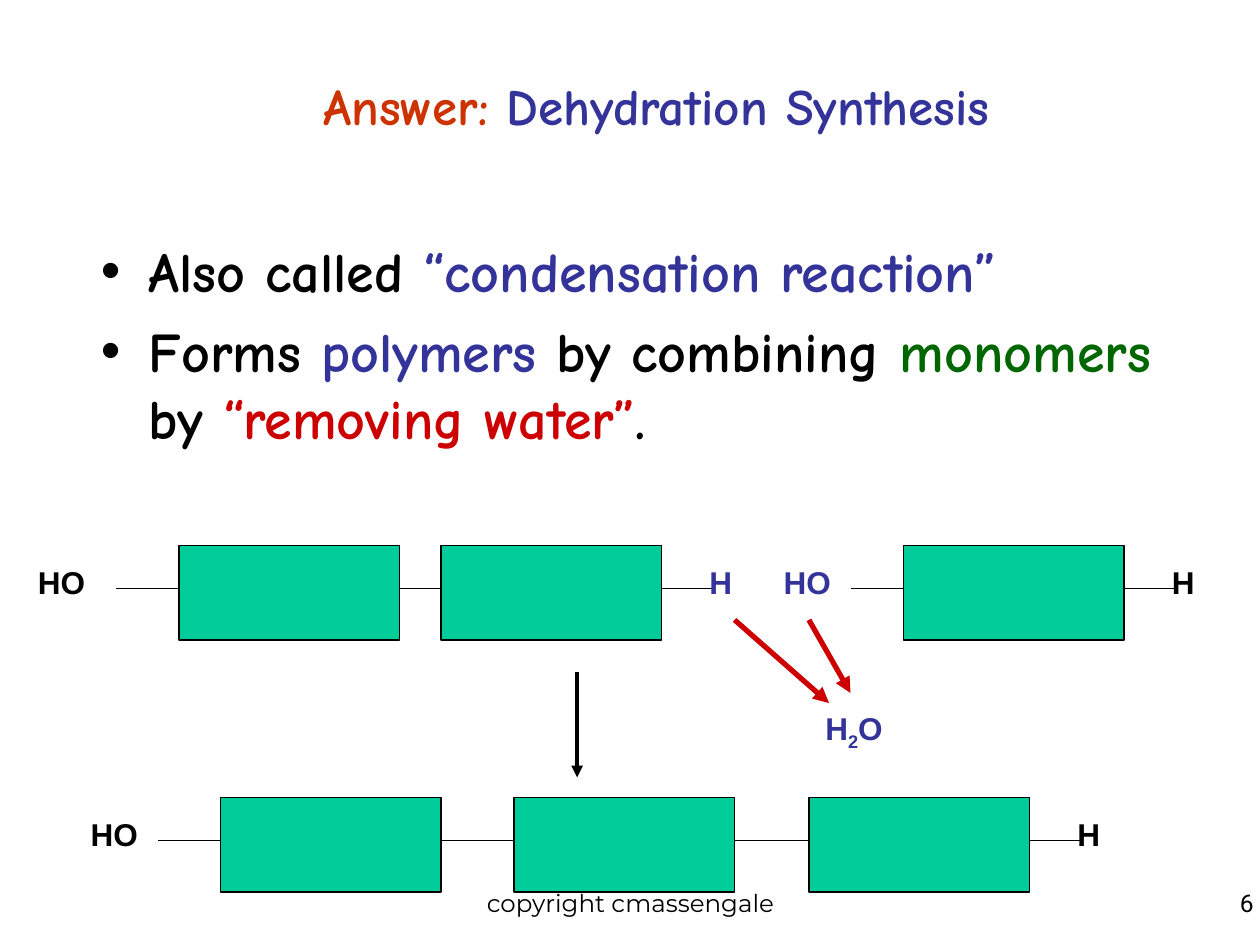
import pptx
import pptx.util
import pptx.dml.color
import pptx.enum.shapes
import pptx.enum.text
import pptx.oxml.ns
import lxml.etree
from dataclasses import dataclass

Inches = pptx.util.Inches
Pt = pptx.util.Pt
Align = pptx.enum.text.PP_ALIGN
Anchor = pptx.enum.text.MSO_ANCHOR
qn = pptx.oxml.ns.qn


@dataclass(frozen=True)
class Theme:
    black: str = "000000"
    blue: str = "333399"
    green: str = "006600"
    red: str = "CC0000"
    orange: str = "CC3300"
    monomer: str = "00CC99"
    hand: str = "Comic Neue"
    label: str = "Arial"
    footer: str = "Montserrat"
    number: str = "Roboto"
    title_size: float = 29.2
    body_size: float = 32
    label_size: float = 18
    small_size: float = 14
    thin: float = 1
    medium: float = 2.25
    thick: float = 3
    inset: float = 0.05


def rgb(value):
    return pptx.dml.color.RGBColor.from_string(value)


class SlideBuilder:
    def __init__(self, slide, theme):
        self.slide = slide
        self.theme = theme

    def text_box(self, left, top, width, height, wrap=True, anchor=Anchor.TOP):
        box = self.slide.shapes.add_textbox(
            Inches(left), Inches(top), Inches(width), Inches(height))
        frame = box.text_frame
        frame.word_wrap = wrap
        frame.vertical_anchor = anchor
        frame.margin_left = frame.margin_right = Inches(self.theme.inset)
        frame.margin_top = frame.margin_bottom = Inches(self.theme.inset)
        return frame

    def add_span(self, para, text, color, font, size, bold=False, baseline=None):
        span = para.add_run()
        span.text = text
        span.font.name = font
        span.font.size = Pt(size)
        span.font.bold = bold
        span.font.color.rgb = rgb(color)
        if baseline is not None:
            span._r.get_or_add_rPr().set("baseline", str(baseline))

    def title(self, spans):
        para = self.text_box(0.67, 0.5, 9.08, 0.67, anchor=Anchor.MIDDLE).paragraphs[0]
        para.alignment = Align.CENTER
        for text, color in spans:
            self.add_span(para, text, color, self.theme.hand, self.theme.title_size, True)

    def bullets(self, items):
        frame = self.text_box(0.75, 1.83, 8.5, 4.5)
        for index, spans in enumerate(items):
            para = frame.add_paragraph() if index else frame.paragraphs[0]
            properties = para._p.get_or_add_pPr()
            properties.set("marL", str(Inches(0.38)))
            properties.set("indent", str(-Inches(0.38)))
            lxml.etree.SubElement(properties, qn("a:buFont"), typeface=self.theme.label)
            lxml.etree.SubElement(properties, qn("a:buChar"), char="•")
            if index:
                para.space_before = Pt(7)
            for text, color in spans:
                self.add_span(para, text, color, self.theme.hand, self.theme.body_size, True)

    def label(self, left, top, width, spans, color, height=0.38):
        para = self.text_box(left, top, width, height, wrap=False).paragraphs[0]
        for text, baseline in spans:
            self.add_span(para, text, color, self.theme.label,
                          self.theme.label_size, True, baseline)

    def small_text(self, left, width, text, font, alignment, wrap):
        para = self.text_box(left, 7, width, 0.36, wrap=wrap).paragraphs[0]
        para.alignment = alignment
        self.add_span(para, text, self.theme.black, font, self.theme.small_size)

    def monomer(self, left, top):
        box = self.slide.shapes.add_shape(
            pptx.enum.shapes.MSO_SHAPE.RECTANGLE,
            Inches(left), Inches(top), Inches(1.75), Inches(0.75))
        box.shadow.inherit = False
        box.fill.solid()
        box.fill.fore_color.rgb = rgb(self.theme.monomer)
        box.line.color.rgb = rgb(self.theme.black)
        box.line.width = Pt(self.theme.thin)

    def line(self, start, end, color, width, arrow=False):
        connector = self.slide.shapes.add_connector(
            pptx.enum.shapes.MSO_CONNECTOR.STRAIGHT,
            *(Inches(value) for value in (*start, *end)))
        connector.line.color.rgb = rgb(color)
        connector.line.width = Pt(width)
        if arrow:
            outline = connector.line._get_or_add_ln()
            lxml.etree.SubElement(outline, qn("a:tailEnd"), type="triangle")
        lxml.etree.SubElement(connector._element.spPr, qn("a:effectLst"))

    def chain(self, top, monomers, bonds, ends):
        for left in monomers:
            self.monomer(left, top)
        bond_y = top + 0.34
        for start, end in bonds:
            self.line((start, bond_y), (end, bond_y), self.theme.black, self.theme.thin)
        for text, left, color in ends:
            width = 0.49 if text == "HO" else 0.29
            self.label(left, top + 0.09, width, [(text, None)], color)


def main():
    theme = Theme()
    deck = pptx.Presentation()
    deck.slide_width = Inches(10)
    deck.slide_height = Inches(7.5)
    page = SlideBuilder(deck.slides.add_slide(deck.slide_layouts[6]), theme)

    page.small_text(9.76, 0.24, "6", theme.number, Align.RIGHT, False)
    page.title([("Answer:", theme.orange), (" Dehydration Synthesis", theme.blue)])
    page.bullets([
        [("Also called ", theme.black), ("“condensation reaction”", theme.blue)],
        [("Forms ", theme.black), ("polymers", theme.blue),
         (" by combining ", theme.black), ("monomers", theme.green),
         (" by ", theme.black), ("“removing water”", theme.red), (".", theme.black)],
    ])

    page.chain(
        6.33, (1.75, 4.08, 6.42),
        ((1.25, 1.75), (3.5, 4.08), (5.83, 6.42), (8.17, 8.58)),
        (("HO", 0.67, theme.black), ("H", 8.5, theme.black)))
    page.chain(
        4.33, (1.42, 3.5, 7.17),
        ((0.92, 1.42), (3.17, 3.5), (5.25, 5.67), (6.75, 7.17), (8.92, 9.33)),
        (("HO", 0.25, theme.black), ("H", 5.58, theme.blue),
         ("HO", 6.17, theme.blue), ("H", 9.25, theme.black)))

    page.line((4.58, 5.33), (4.58, 6.17), theme.black, theme.medium, arrow=True)
    page.label(6.5, 5.58, 0.58, [("H", None), ("2", -25000), ("O", None)],
               theme.blue, height=0.43)
    for start, end in (((5.83, 4.92), (6.58, 5.58)), ((6.42, 4.92), (6.75, 5.5))):
        page.line(start, end, theme.red, theme.thick, arrow=True)

    page.small_text(3.42, 3.17, "copyright cmassengale", theme.footer, Align.CENTER, True)
    deck.save("out.pptx")


if __name__ == "__main__":
    main()
